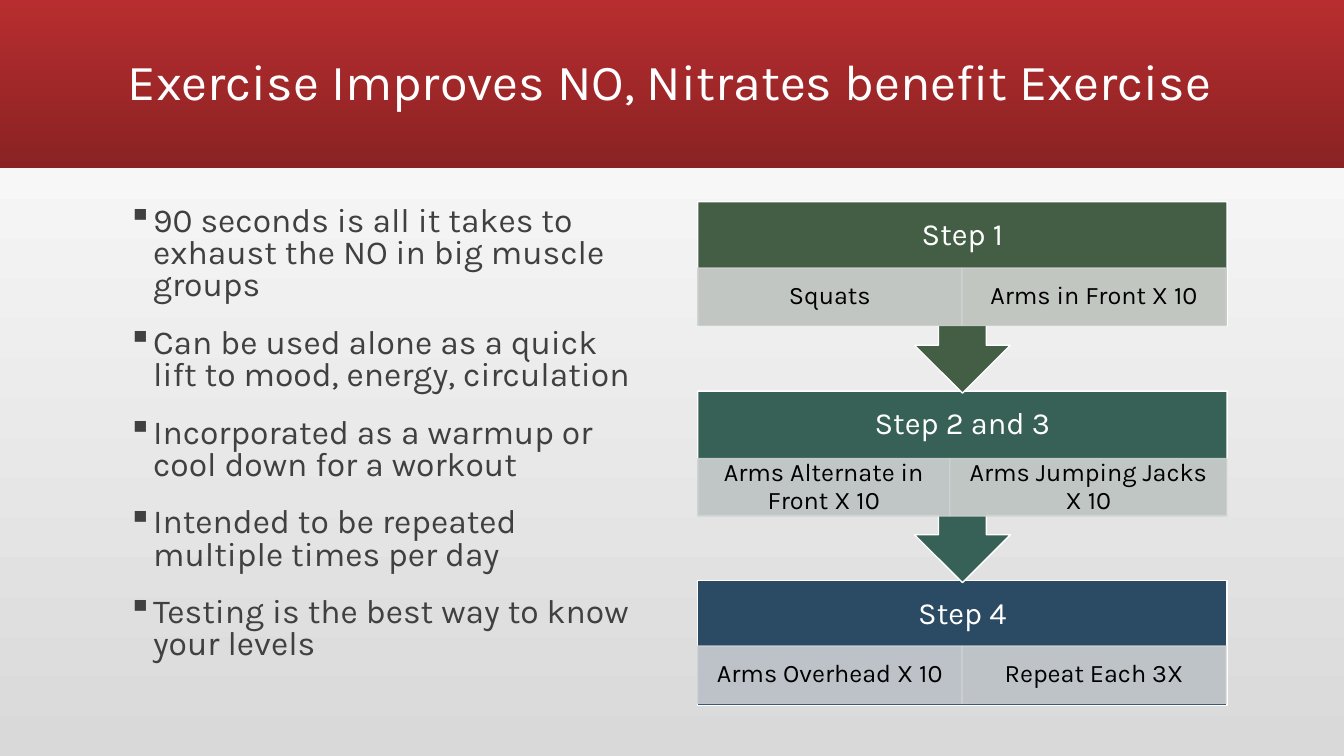
from lxml.etree import SubElement
from pptx import Presentation
from pptx.dml.color import RGBColor
from pptx.enum.shapes import MSO_SHAPE
from pptx.enum.text import MSO_ANCHOR, PP_ALIGN
from pptx.oxml.ns import qn
from pptx.util import Inches, Pt


def rgb(hex_color):
    return RGBColor.from_string(hex_color)


class SlideBuilder:
    font = "Karla"
    white, black, gray = "FFFFFF", "000000", "404040"

    def __init__(self, slide):
        self.slide = slide

    def gradient(self, fill, first, last, angle):
        fill.gradient()
        fill.gradient_angle = angle
        for stop, color in zip(fill.gradient_stops, (first, last)):
            stop.color.rgb = rgb(color)

    def shape(self, kind, left, top, width, height, color=None, line=None, opacity=None):
        shape = self.slide.shapes.add_shape(
            kind, Inches(left), Inches(top), Inches(width), Inches(height))
        shape.shadow.inherit = False
        if color:
            shape.fill.solid()
            shape.fill.fore_color.rgb = rgb(color)
        if line:
            shape.line.color.rgb = rgb(line)
            shape.line.width = Pt(1)
        else:
            shape.line.fill.background()
        if opacity:
            for node in shape.element.spPr.iter(qn("a:srgbClr")):
                SubElement(node, qn("a:alpha"), val=str(opacity * 1000))
        return shape

    def text_box(self, left, top, width, height):
        return self.slide.shapes.add_textbox(
            Inches(left), Inches(top), Inches(width), Inches(height))

    def frame(self, shape, anchor=MSO_ANCHOR.MIDDLE, inset_x=0.1, inset_y=0.05):
        frame = shape.text_frame
        frame.word_wrap = True
        frame.vertical_anchor = anchor
        frame.margin_left = frame.margin_right = Inches(inset_x)
        frame.margin_top = frame.margin_bottom = Inches(inset_y)
        return frame

    def add_text(self, paragraph, text, size, color, align=PP_ALIGN.LEFT, spacing=0.9):
        paragraph.alignment = align
        paragraph.line_spacing = spacing
        run = paragraph.add_run()
        run.text = text
        run.font.size = Pt(size)
        run.font.name = self.font
        run.font.color.rgb = rgb(color)

    def title(self, text):
        frame = self.frame(self.text_box(1.17, 0.11, 11, 1.45))
        self.add_text(frame.paragraphs[0], text, 36, self.white)

    def bullets(self, points):
        frame = self.frame(self.text_box(1.17, 2, 5.25, 5), MSO_ANCHOR.TOP)
        for index, point in enumerate(points):
            paragraph = frame.add_paragraph() if index else frame.paragraphs[0]
            self.add_text(paragraph, point, 24, self.gray, spacing=0.8)
            paragraph.space_before = Pt(18)
            properties = paragraph._p.get_or_add_pPr()
            properties.set("marL", str(Inches(0.25)))
            properties.set("indent", str(-Inches(0.25)))
            SubElement(properties, qn("a:buChar"), char="▪")

    def step(self, kind, top, height, color, heading, cell_top, cells):
        left, width = 6.92, 5.25
        block = self.shape(kind, left, top, width, height, color, self.white)
        if kind == MSO_SHAPE.UP_ARROW_CALLOUT:
            block.rotation = 180
        frame = self.frame(self.text_box(left, top, width, 0.67), inset_x=0.17, inset_y=0.17)
        self.add_text(frame.paragraphs[0], heading, 22, self.white, PP_ALIGN.CENTER)
        for text, cell_width, cell_color in cells:
            cell = self.shape(MSO_SHAPE.RECTANGLE, left, cell_top, cell_width, 0.57,
                              cell_color, cell_color, 90)
            frame = self.frame(cell, inset_x=0.14, inset_y=0.03)
            self.add_text(frame.paragraphs[0], text, 18, self.black, PP_ALIGN.CENTER)
            left += cell_width


POINTS = [
    "90 seconds is all it takes to exhaust the NO in big muscle groups",
    "Can be used alone as a quick lift to mood, energy, circulation",
    "Incorporated as a warmup or cool down for a workout",
    "Intended to be repeated multiple times per day",
    "Testing is the best way to know your levels",
]

# Block shape, height, color, heading, cell top, then text, width and color of each cell
STEPS = [
    (MSO_SHAPE.UP_ARROW_CALLOUT, 1.9, "445E45", "Step 1", 2.66,
     [("Squats", 2.62, "CFD2D0"), ("Arms in Front X 10", 2.62, "CFD2CF")]),
    (MSO_SHAPE.UP_ARROW_CALLOUT, 1.9, "376156", "Step 2 and 3", 4.55,
     [("Arms Alternate in Front X 10", 2.5, "CED2D2"),
      ("Arms Jumping Jacks X 10", 2.75, "CED2D1")]),
    (MSO_SHAPE.RECTANGLE, 1.24, "2B4A63", "Step 4", 6.41,
     [("Arms Overhead X 10", 2.62, "CDD0D3"), ("Repeat Each 3X", 2.62, "CED1D3")]),
]
STEP_TOP, STEP_PITCH = 2, 1.88


def main():
    presentation = Presentation()
    presentation.slide_width = Inches(13.33)
    presentation.slide_height = Inches(7.5)
    slide = presentation.slides.add_slide(presentation.slide_layouts[6])
    builder = SlideBuilder(slide)

    # Background and title band
    builder.gradient(slide.background.fill, "D9D9D9", "FFFFFF", 90)
    band = builder.shape(MSO_SHAPE.RECTANGLE, 0, 0, 13.33, 1.67)
    builder.gradient(band.fill, "B82D2F", "8A2223", 270)
    builder.title("Exercise Improves NO, Nitrates benefit Exercise")

    # Benefits on the left
    builder.bullets(POINTS)

    # Steps on the right, last one first so each arrow tip lies on the next block
    for index, step in reversed(list(enumerate(STEPS))):
        kind, *details = step
        builder.step(kind, STEP_TOP + index * STEP_PITCH, *details)

    presentation.save("out.pptx")


if __name__ == "__main__":
    main()
